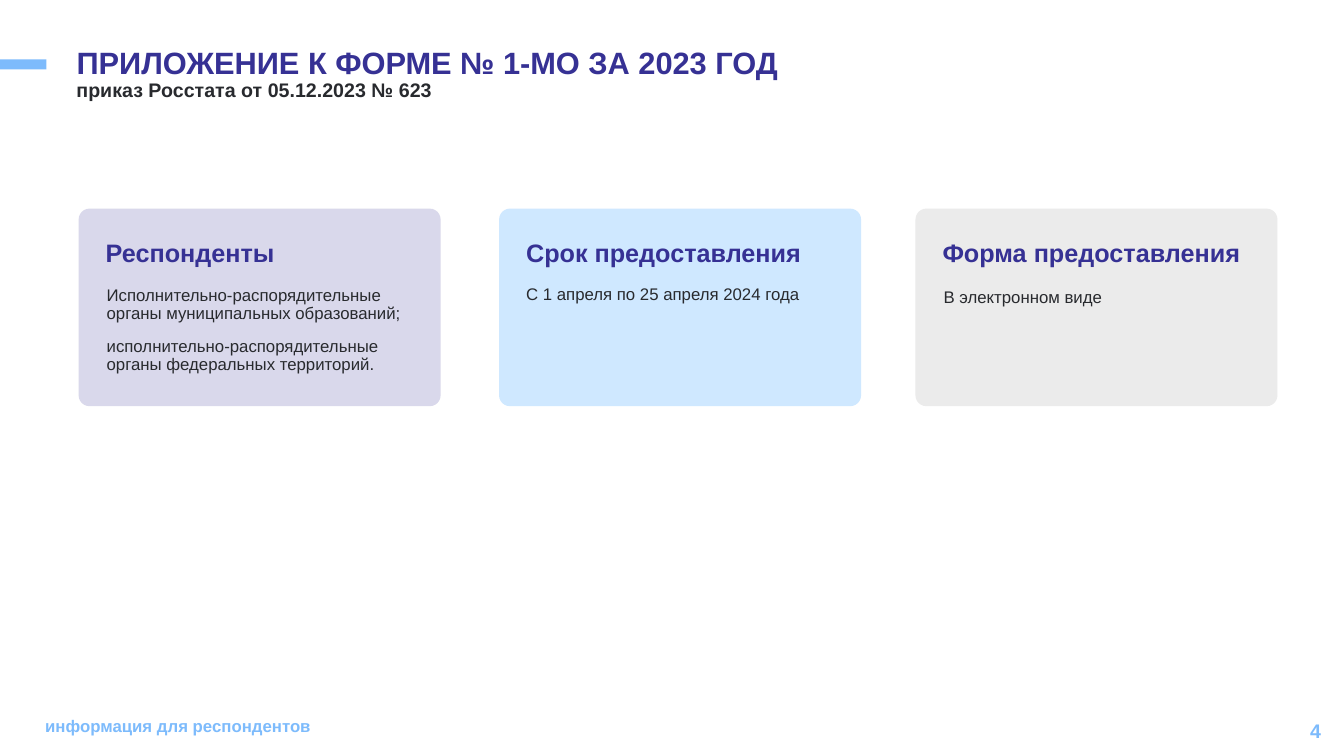
from dataclasses import dataclass

from pptx import Presentation
from pptx.dml.color import RGBColor
from pptx.enum.shapes import MSO_SHAPE
from pptx.enum.text import MSO_ANCHOR, MSO_AUTO_SIZE, PP_ALIGN
from pptx.shapes.autoshape import Shape
from pptx.slide import Slide
from pptx.util import Inches, Pt

RECTANGLE = MSO_SHAPE.RECTANGLE
ROUNDED = MSO_SHAPE.ROUNDED_RECTANGLE
TOP, MIDDLE = MSO_ANCHOR.TOP, MSO_ANCHOR.MIDDLE
LEFT, RIGHT = PP_ALIGN.LEFT, PP_ALIGN.RIGHT
NO_AUTOFIT = MSO_AUTO_SIZE.NONE

INDIGO, SKY, INK = "363194", "7DBBFC", "282A2E"
CARD_TOP, CARD_WIDTH, CARD_HEIGHT = 2.07, 3.59, 1.96
HEADING_TOP, BODY_TOP = 2.34, 2.79
TEXT_INDENT = 0.17


@dataclass(frozen=True)
class TextStyle:
    size: float
    color: str
    bold: bool = True
    line_spacing: float = 0.9
    space_before: float = 10
    align: PP_ALIGN = LEFT
    anchor: MSO_ANCHOR = TOP


@dataclass(frozen=True)
class Card:
    left: float
    fill: str
    heading: str
    paragraphs: tuple[str, ...]
    body_shift: float = 0
    line_spacing: float = 0.9


TITLE = TextStyle(22, INDIGO)
SUBTITLE = TextStyle(14, INK)
HEADING = TextStyle(18, INDIGO)
FOOTER = TextStyle(12, SKY, line_spacing=1)
PAGE_NUMBER = TextStyle(14, SKY, line_spacing=1, align=RIGHT, anchor=MIDDLE)

CARDS = (
    Card(0.78, "D9D8EB", "Респонденты",
         ("Исполнительно-распорядительные органы муниципальных образований;",
          "исполнительно-распорядительные органы федеральных территорий."),
         body_shift=0.01),
    Card(4.95, "CFE8FF", "Срок предоставления",
         ("С 1 апреля по 25 апреля 2024 года",)),
    Card(9.08, "EBEBEB", "Форма предоставления",
         ("В электронном виде",), body_shift=0.01, line_spacing=1),
)


def rgb(color: str) -> RGBColor:
    return RGBColor.from_string(color)


def place(box: Shape, left: float, top: float, width: float, height: float) -> None:
    position = {"left": left, "top": top, "width": width, "height": height}
    for name, value in position.items():
        setattr(box, name, Inches(value))


def write(box: Shape, paragraphs: tuple[str, ...], style: TextStyle) -> None:
    frame = box.text_frame
    frame_format = {"word_wrap": True, "auto_size": NO_AUTOFIT,
                    "vertical_anchor": style.anchor}
    for name, value in frame_format.items():
        setattr(frame, name, value)
    for index, text in enumerate(paragraphs):
        para = frame.add_paragraph() if index else frame.paragraphs[0]
        para_format = {"alignment": style.align,
                       "line_spacing": style.line_spacing,
                       "space_before": Pt(style.space_before if index else 0)}
        for name, value in para_format.items():
            setattr(para, name, value)
        span = para.add_run()
        span.text = text
        font_format = {"name": "Arial", "size": Pt(style.size), "bold": style.bold}
        for name, value in font_format.items():
            setattr(span.font, name, value)
        span.font.color.rgb = rgb(style.color)


def add_text(page: Slide, left: float, top: float, width: float, height: float,
             paragraphs: tuple[str, ...], style: TextStyle) -> None:
    box = page.shapes.add_textbox(
        Inches(left), Inches(top), Inches(width), Inches(height))
    write(box, paragraphs, style)


def add_block(page: Slide, kind: MSO_SHAPE, left: float, top: float,
              width: float, height: float, fill: str) -> Shape:
    block = page.shapes.add_shape(
        kind, Inches(left), Inches(top), Inches(width), Inches(height))
    block.shadow.inherit = False
    block.fill.solid()
    block.fill.fore_color.rgb = rgb(fill)
    block.line.fill.background()
    return block


def add_card(page: Slide, card: Card) -> None:
    panel = add_block(page, ROUNDED, card.left, CARD_TOP,
                      CARD_WIDTH, CARD_HEIGHT, card.fill)
    panel.adjustments[0] = 0.055
    text_left = card.left + TEXT_INDENT
    add_text(page, text_left, HEADING_TOP, 3.3, 0.44, (card.heading,), HEADING)
    body = TextStyle(12, INK, bold=False, line_spacing=card.line_spacing)
    add_text(page, text_left + card.body_shift, BODY_TOP + card.body_shift,
             3.4, 0.99, card.paragraphs, body)


def main() -> None:
    deck = Presentation()
    deck.slide_width, deck.slide_height = Inches(13.33), Inches(7.5)
    page = deck.slides.add_slide(deck.slide_layouts.get_by_name("Title Only"))

    # Title area
    add_block(page, RECTANGLE, 0, 0.59, 0.46, 0.1, SKY)
    title = page.shapes.title
    place(title, 0.66, 0.43, 8.87, 0.57)
    write(title, ("ПРИЛОЖЕНИЕ К ФОРМЕ № 1-МО ЗА 2023 ГОД",), TITLE)
    add_text(page, 0.66, 0.75, 8.87, 0.4,
             ("приказ Росстата от 05.12.2023 № 623",), SUBTITLE)

    # Cards
    for card in CARDS:
        add_card(page, card)

    # Footer
    add_text(page, 0.35, 7.05, 9.8, 0.4, ("информация для респондентов",), FOOTER)
    add_text(page, 10.2, 7.05, 3, 0.4, ("4",), PAGE_NUMBER)

    deck.save("out.pptx")


if __name__ == "__main__":
    main()
